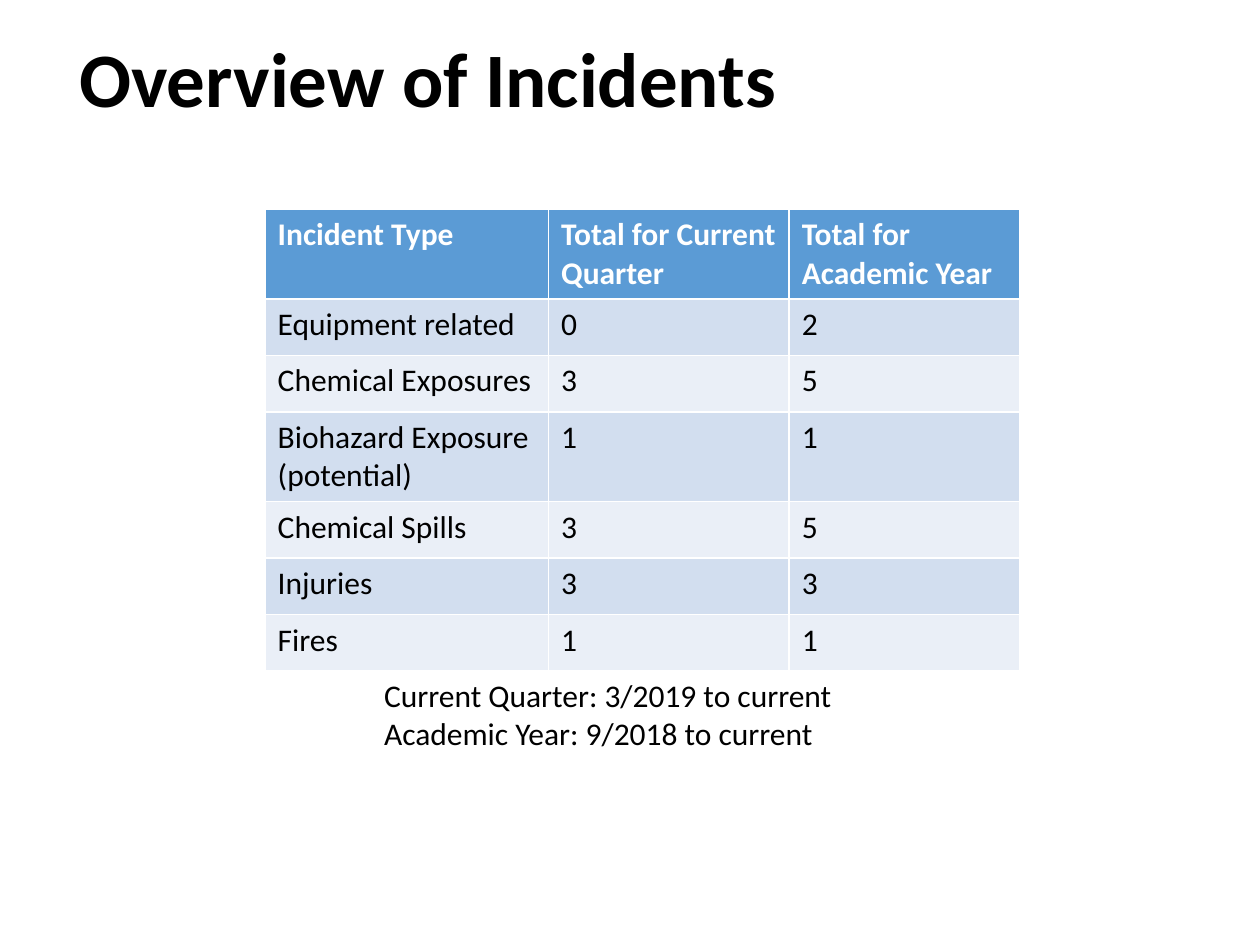
from pptx import Presentation
from pptx.dml.color import RGBColor
from pptx.enum.text import MSO_ANCHOR, PP_ALIGN
from pptx.util import Pt

COLORS = {
    "text": "000000",
    "header_text": "FFFFFF",
    "header": "5B9BD5",
    "band_dark": "D2DEEF",
    "band_light": "EAEFF7",
}
FONT = "Calibri"
TITLE_ONLY = 5

HEADINGS = ("Incident Type", "Total for Current Quarter", "Total for Academic Year")
INCIDENTS = [
    ("Equipment related", 0, 2),
    ("Chemical Exposures", 3, 5),
    ("Biohazard Exposure\n(potential)", 1, 1),
    ("Chemical Spills", 3, 5),
    ("Injuries", 3, 3),
    ("Fires", 1, 1),
]
COLUMN_WIDTHS = (162, 137.5, 131.8)
ROW_HEIGHT = 32.3
PERIODS = "Current Quarter: 3/2019 to current\nAcademic Year: 9/2018 to current"


def write(frame, text, size=18, color="text", bold=False):
    """Fill a text frame, one paragraph per line, in a single style."""
    frame.text = text
    for paragraph in frame.paragraphs:
        paragraph.alignment = PP_ALIGN.LEFT
        font = paragraph.font
        font.name, font.size, font.bold = FONT, Pt(size), bold
        font.color.rgb = RGBColor.from_string(COLORS[color])


def add_title(slide, text):
    title = slide.shapes.title
    title.left, title.top, title.width, title.height = Pt(38), Pt(11), Pt(621), Pt(72)
    write(title.text_frame, text, size=44, bold=True)
    title.text_frame.vertical_anchor = MSO_ANCHOR.MIDDLE
    title.text_frame.paragraphs[0].line_spacing = 0.9


def add_incident_table(slide):
    """Add the table; its default style supplies the white cell borders."""
    rows = [HEADINGS, *INCIDENTS]
    table = slide.shapes.add_table(
        len(rows), len(HEADINGS), Pt(151.5), Pt(119.8),
        Pt(sum(COLUMN_WIDTHS)), Pt(ROW_HEIGHT * len(rows))).table
    for column, width in zip(table.columns, COLUMN_WIDTHS):
        column.width = Pt(width)
    for r, values in enumerate(rows):
        table.rows[r].height = Pt(ROW_HEIGHT)
        is_header = r == 0
        band = "header" if is_header else "band_dark" if r % 2 else "band_light"
        for c, value in enumerate(values):
            cell = table.cell(r, c)
            cell.fill.solid()
            cell.fill.fore_color.rgb = RGBColor.from_string(COLORS[band])
            write(cell.text_frame, str(value), bold=is_header,
                  color="header_text" if is_header else "text")


def add_period_note(slide, text):
    note = slide.shapes.add_textbox(Pt(212.4), Pt(383), Pt(273.6), Pt(72.7))
    note.text_frame.word_wrap = True
    write(note.text_frame, text)


def main():
    deck = Presentation()
    deck.slide_width, deck.slide_height = Pt(720), Pt(540)
    slide = deck.slides.add_slide(deck.slide_layouts[TITLE_ONLY])
    add_title(slide, "Overview of Incidents")
    add_incident_table(slide)
    add_period_note(slide, PERIODS)
    deck.save("out.pptx")


if __name__ == "__main__":
    main()
